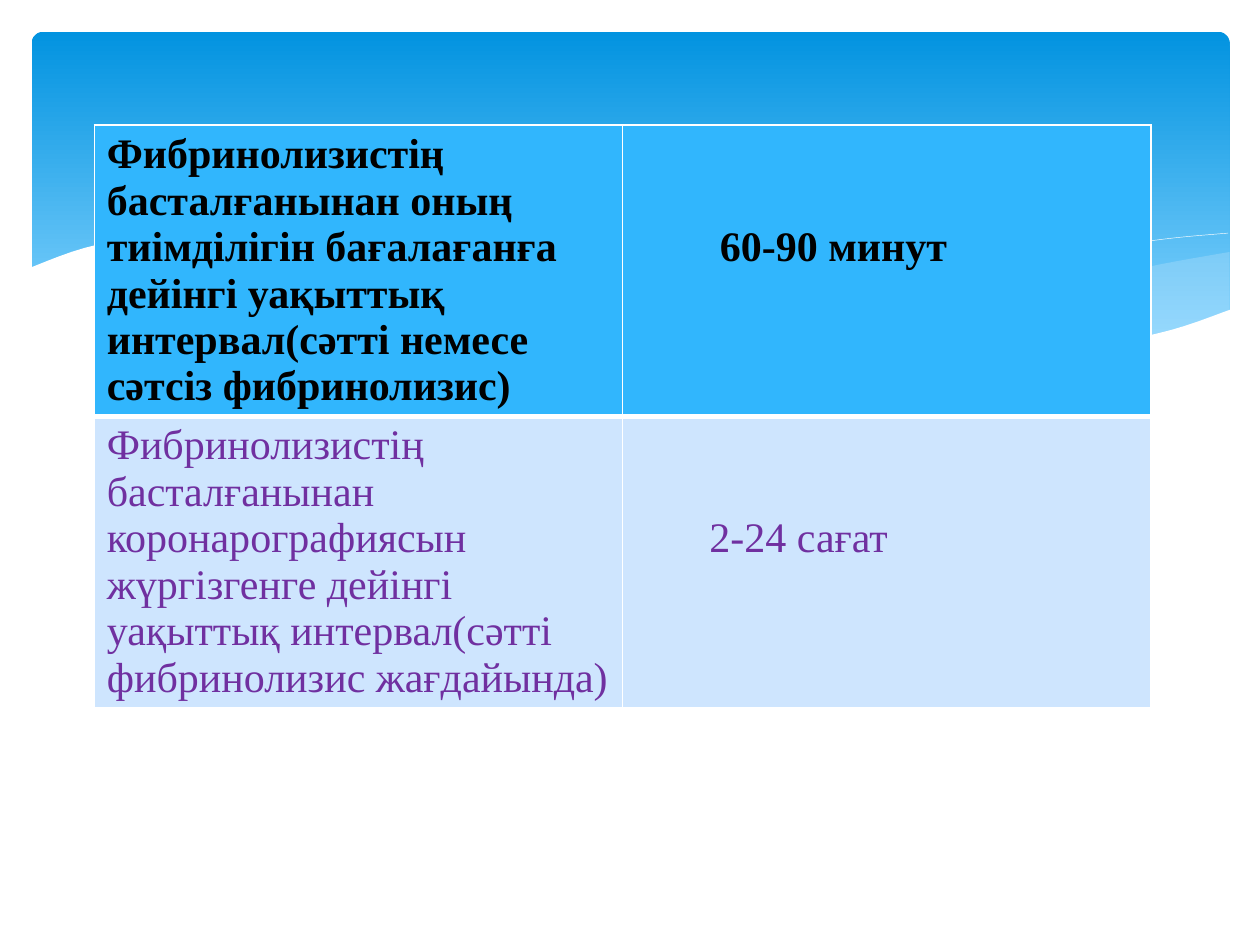
from lxml.etree import SubElement
from pptx import Presentation
from pptx.dml.color import RGBColor
from pptx.enum.shapes import MSO_SHAPE as Shape
from pptx.oxml.ns import qn
from pptx.util import Cm, Pt

WHITE = "FFFFFF"
PALE = "C6E7FC"
FONT = "Times New Roman"

RIGHT_TOP = [(24.21, 0.41), (22.81, 0.66), (21.29, 0.99), (19.2, 1.47), (17.35, 1.85), (16.21, 2.06)]
RIGHT_BOTTOM = [(16.21, 2.06), (17.32, 2.21), (18.64, 2.34), (19.81, 2.39), (21.11, 2.34),
                (22.4, 2.16), (23.52, 1.85), (24.21, 1.6)]
MIDDLE_TOP = [(22.1, 2.26), (19.91, 1.93), (17.35, 1.42), (15.39, 0.97), (13.51, 0.53),
              (11.84, 0.25), (10.08, 0.08), (8.59, 0.03), (6.68, 0.18)]
MIDDLE_BOTTOM = [(6.68, 0.18), (8.61, 0.48), (10.82, 0.97), (12.88, 1.42), (15.11, 1.88),
                 (17.07, 2.18), (18.75, 2.36), (20.45, 2.39), (22.1, 2.26)]
FALLING_LINE = [(7.26, 0.28), (8.38, 0.13), (9.98, 0.08), (11.84, 0.15), (14.2, 0.41),
                (16.31, 0.74), (18.72, 1.24), (20.52, 1.7), (22.45, 2.24)]
RISING_LINE = [(14.99, 1.85), (17.07, 1.3), (19.13, 0.81), (21.41, 0.38), (22.89, 0.15), (24.18, 0.03)]
FRONT_EDGE = [(24.23, 1.57), (23.04, 1.98), (21.64, 2.26), (19.96, 2.36), (18.31, 2.29),
              (15.88, 1.98), (13.51, 1.55), (10.77, 0.91), (8.05, 0.33), (5.77, 0.05),
              (3.91, 0), (2.44, 0.08), (1.12, 0.33), (0, 0.74)]

ROWS = [
    dict(label="Фибринолизистің басталғанынан оның тиімділігін бағалағанға дейінгі "
               "уақыттық интервал(сәтті немесе сәтсіз фибринолизис)",
         value="60-90 минут", indent=1.96, fill="31B6FD", color="000000", bold=True,
         borders=dict(lnL=1, lnR=1, lnT=1, lnB=3)),
    dict(label="Фибринолизистің басталғанынан коронарографиясын жүргізгенге дейінгі "
               "уақыттық интервал(сәтті фибринолизис жағдайында)",
         value="2-24 сағат", indent=1.75, fill="CEE5FE", color="7030A0", bold=False,
         borders=dict(lnL=1, lnR=1, lnB=1)),
]


def rgb(value):
    return RGBColor.from_string(value)


def smooth_curve(knots, steps=5):
    ends = [knots[0], *knots, knots[-1]]
    points = [knots[0]]
    for a, b, c, d in zip(ends, ends[1:], ends[2:], ends[3:]):
        for t in (i / steps for i in range(1, steps + 1)):
            points.append(tuple(
                (2 * q + (r - p) * t + (2 * p - 5 * q + 4 * r - s) * t ** 2
                 + (3 * q - p - 3 * r + s) * t ** 3) / 2
                for p, q, r, s in zip(a, b, c, d)))
    return points


def add_outline(slide, points, left, top, fill=None, alpha=None, line=None):
    placed = [(Cm(left + x), Cm(top + y)) for x, y in points]
    builder = slide.shapes.build_freeform(*placed[0], scale=1.0)
    builder.add_line_segments(placed[1:], close=fill is not None)
    sp = builder.convert_to_shape()
    sp.shadow.inherit = False
    if fill:
        sp.fill.solid()
        sp.fill.fore_color.rgb = rgb(fill)
    else:
        sp.fill.background()
    if alpha:
        color = sp.fill._xPr.find(qn("a:solidFill"))[0]
        SubElement(color, qn("a:alpha")).set("val", str(alpha * 1000))
    if line:
        sp.line.color.rgb = rgb(line)
        sp.line.width = Pt(0.25)
    else:
        sp.line.fill.background()


def add_panel(slide, left, top, width, height):
    sp = slide.shapes.add_shape(Shape.ROUNDED_RECTANGLE, Cm(left), Cm(top), Cm(width), Cm(height))
    sp.adjustments[0] = 0.034
    sp.shadow.inherit = False
    sp.line.fill.background()
    sp.fill.gradient()
    sp.fill.gradient_angle = 270
    for stop, color, position in zip(sp.fill.gradient_stops, ("0293E0", "83D3FE"), (0, 0.9)):
        stop.color.rgb = rgb(color)
        stop.position = position


def add_waves(slide, left, top, width, height):
    for upper, lower, alpha in ((RIGHT_TOP, RIGHT_BOTTOM, 29), (MIDDLE_TOP, MIDDLE_BOTTOM, 40)):
        add_outline(slide, smooth_curve(upper) + smooth_curve(lower), left, top, fill=PALE, alpha=alpha)
    for knots in (FALLING_LINE, RISING_LINE):
        add_outline(slide, smooth_curve(knots), left, top, line=WHITE)
    corners = [(0, height), (width, height)]
    add_outline(slide, smooth_curve(FRONT_EDGE) + corners, left, top, fill=WHITE)


def add_text(tf, text, size=24, color="000000", bold=False, font=FONT):
    r = tf.paragraphs[0].add_run()
    r.text = text
    r.font.size = Pt(size)
    r.font.name = font
    r.font.bold = bold
    r.font.color.rgb = rgb(color)


def format_cell(cell, fill, borders):
    tc_pr = cell._tc.get_or_add_tcPr()
    for side, width in borders.items():
        ln = SubElement(tc_pr, qn(f"a:{side}"), w=str(Pt(width)))
        SubElement(SubElement(ln, qn("a:solidFill")), qn("a:srgbClr"), val=WHITE)
    cell.fill.solid()
    cell.fill.fore_color.rgb = rgb(fill)


def add_interval_table(slide, left, top, width, height):
    frame = slide.shapes.add_table(len(ROWS), 2, Cm(left), Cm(top), Cm(width), Cm(height))
    table = frame.table
    for i, row in enumerate(ROWS):
        label, value = table.cell(i, 0), table.cell(i, 1)
        for cell, text in ((label, row["label"]), (value, row["value"])):
            format_cell(cell, row["fill"], row["borders"])
            add_text(cell.text_frame, text, color=row["color"], bold=row["bold"])
        value.margin_left = Cm(row["indent"])
        value.margin_top = Cm(2)


def main():
    prs = Presentation()
    prs.slide_width, prs.slide_height = Cm(25.4), Cm(19.05)
    slide = prs.slides.add_slide(prs.slide_layouts[6])
    add_panel(slide, 0.64, 0.64, 24.15, 6.86)
    add_waves(slide, 0.58, 4.67, 24.23, 3.68)
    add_interval_table(slide, 1.9, 2.52, 21.3, 11.02)
    prs.save("out.pptx")


if __name__ == "__main__":
    main()
